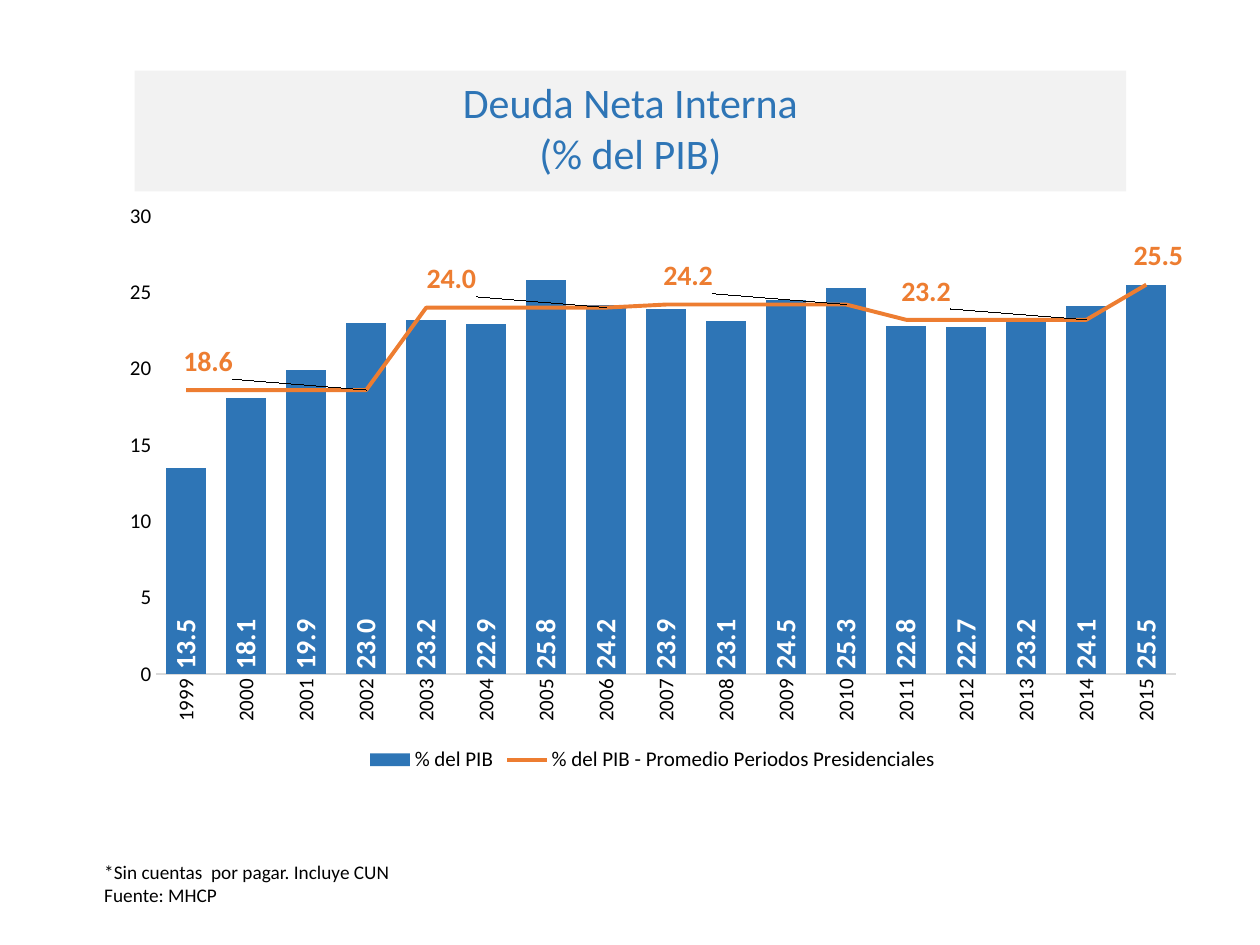
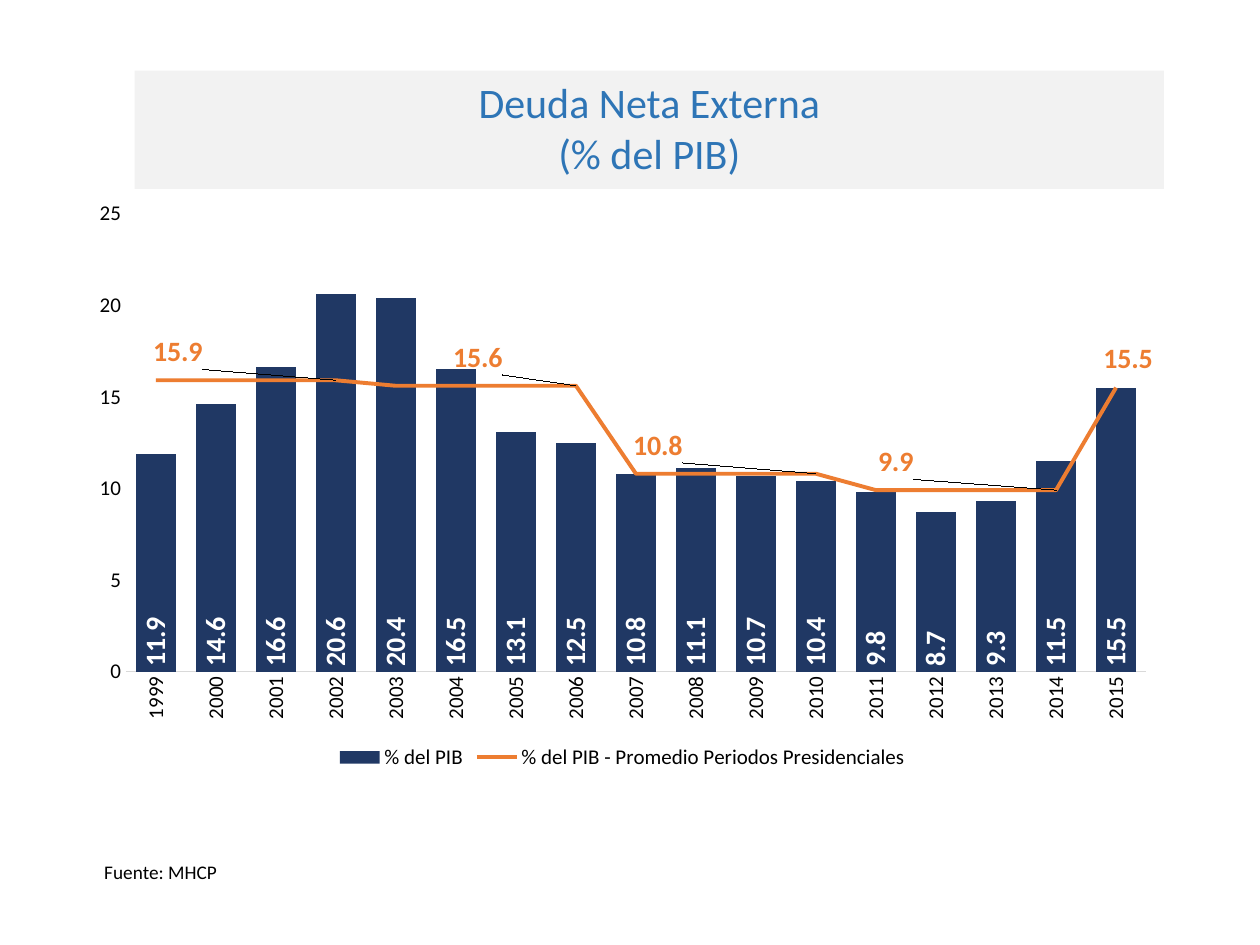
from lxml import etree
from pptx import Presentation
from pptx.chart.data import CategoryChartData as ChartData
from pptx.dml.color import RGBColor
from pptx.enum.chart import XL_CHART_TYPE as Kind
from pptx.enum.chart import XL_LABEL_POSITION as Spot
from pptx.enum.chart import XL_LEGEND_POSITION as Side
from pptx.enum.chart import XL_MARKER_STYLE as Mark
from pptx.enum.chart import XL_TICK_MARK as Tick
from pptx.enum.shapes import MSO_SHAPE as Shape
from pptx.enum.text import MSO_ANCHOR as Anchor
from pptx.enum.text import PP_ALIGN as Align
from pptx.oxml import parse_xml
from pptx.oxml.ns import qn
from pptx.util import Pt

BLUE = RGBColor(0x2E, 0x75, 0xB6)
NAVY = RGBColor(0x20, 0x38, 0x64)
ORANGE = RGBColor(0xED, 0x7D, 0x31)
PALE = RGBColor(0xF2, 0xF2, 0xF2)
GREY = RGBColor(0xD9, 0xD9, 0xD9)
WHITE = RGBColor(0xFF, 0xFF, 0xFF)
BLACK = RGBColor(0, 0, 0)
FONT = "Calibri"
YEARS = [str(year) for year in range(1999, 2016)]
TERM = 4
NS = ('xmlns:c="http://schemas.openxmlformats.org/drawingml/2006/chart" '
      'xmlns:a="http://schemas.openxmlformats.org/drawingml/2006/main"')


def style(font, size, color, bold=False):
    font.name, font.size, font.bold = FONT, Pt(size), bold
    font.color.rgb = color


def write(frame, lines, size, color, align=Align.LEFT, wrap=True):
    frame.word_wrap = wrap
    frame.vertical_anchor = Anchor.TOP
    frame.text = "\n".join(lines)
    for para in frame.paragraphs:
        para.alignment = align
        style(para.font, size, color)


def add_title(slide, box, lines):
    band = slide.shapes.add_shape(Shape.RECTANGLE, *map(Pt, box))
    band.shadow.inherit = False
    band.fill.solid()
    band.fill.fore_color.rgb = PALE
    band.line.fill.background()
    write(band.text_frame, lines, 24, BLUE, align=Align.CENTER)


def add_note(slide, box, lines):
    note = slide.shapes.add_textbox(*map(Pt, box))
    write(note.text_frame, lines, 11, BLACK, wrap=False)


def layout(x, y, **more):
    parts = {"x": x, "y": y, **more}
    body = "".join(f'<c:{key} val="{val}"/>' for key, val in parts.items())
    inner = ""
    if more:
        inner = ('<c:layoutTarget val="inner"/><c:xMode val="edge"/>'
                 '<c:yMode val="edge"/>')
    return parse_xml(f"<c:layout {NS}><c:manualLayout>{inner}{body}"
                     "</c:manualLayout></c:layout>")


def turn(node):
    for body in node.xpath("./c:txPr/a:bodyPr"):
        body.set("rot", "-5400000")
        body.set("vert", "horz")


def split_line(chart):
    bars = chart.plots[0]._element
    row = bars.findall(qn("c:ser"))[1]
    for flag in row.findall(qn("c:invertIfNegative")):
        row.remove(flag)
    plot = parse_xml(f'<c:lineChart {NS}><c:grouping val="standard"/>'
                     '<c:varyColors val="0"/></c:lineChart>')
    plot.append(row)
    etree.SubElement(plot, qn("c:marker")).set("val", "1")
    for axis in bars.findall(qn("c:axId")):
        etree.SubElement(plot, qn("c:axId")).set("val", axis.get("val"))
    bars.addnext(plot)
    return chart.plots[1].series[0]


def style_bars(plot, color):
    plot.gap_width = 50
    plot.vary_by_categories = False
    bars = plot.series[0]
    bars.invert_if_negative = False
    bars.format.fill.solid()
    bars.format.fill.fore_color.rgb = color
    tags = bars.data_labels
    tags.show_value = True
    tags.position = Spot.INSIDE_BASE
    style(tags.font, 16, WHITE, bold=True)
    turn(tags._element)


def style_line(line, shifts):
    line.smooth = False
    line.marker.style = Mark.NONE
    line.format.line.color.rgb = ORANGE
    line.format.line.width = Pt(2.25)
    line.data_labels.show_value = False
    for spot in shifts:
        tag = line.points[spot].data_label
        style(tag.font, 16, ORANGE, bold=True)
        tag.position = Spot.ABOVE
    for tag in line._element.xpath("./c:dLbls/c:dLbl"):
        mark = tag.find(qn("c:idx"))
        mark.addnext(layout(*shifts[int(mark.get("val"))]))


def style_axes(chart, top):
    cats, vals = chart.category_axis, chart.value_axis
    for axis in (cats, vals):
        axis.major_tick_mark = axis.minor_tick_mark = Tick.NONE
        axis.has_major_gridlines = False
        style(axis.tick_labels.font, 12, BLACK)
    turn(cats._element)
    cats.format.line.color.rgb = GREY
    cats.format.line.width = Pt(0.75)
    vals.format.line.fill.background()
    vals.minimum_scale, vals.maximum_scale, vals.major_unit = 0, top, 5
    vals.tick_labels.number_format = "#,##0"
    vals.tick_labels.number_format_is_linked = False


def add_debt(slide, box, debt, means, color, top, shifts):
    data = ChartData(number_format="0.0")
    data.categories = YEARS
    data.add_series("% del PIB", debt)
    data.add_series("% del PIB - Promedio Periodos Presidenciales",
                    [means[i // TERM] for i in range(len(YEARS))])
    chart = slide.shapes.add_chart(
        Kind.COLUMN_CLUSTERED, *map(Pt, box), data).chart
    style(chart.font, 12, BLACK)
    chart.has_title = False
    chart.has_legend = True
    chart.legend.position = Side.BOTTOM
    chart.legend.include_in_layout = False
    style(chart.legend.font, 12, BLACK)
    line = split_line(chart)
    style_bars(chart.plots[0], color)
    style_line(line, shifts)
    style_axes(chart, top)
    area = chart._chartSpace.find(qn("c:chart"))
    area.addnext(parse_xml(
        f'<c:spPr {NS}><a:solidFill><a:srgbClr val="{WHITE}"/></a:solidFill>'
        "<a:ln><a:noFill/></a:ln></c:spPr>"))
    plot = area.find(qn("c:plotArea"))
    for old in plot.findall(qn("c:layout")):
        plot.remove(old)
    plot.insert(0, layout(0.045, 0.042, w=0.935, h=0.782))


def add_page(deck, name, width, spot, notes, **facts):
    slide = deck.slides.add_slide(deck.slide_layouts[6])
    add_note(slide, (52.5, 488, 180, 4 + 15 * len(notes)), notes)
    add_title(slide, (77, 40.3, width, 94.3), [name, "(% del PIB)"])
    add_debt(slide, (*spot, 623.5, 334.8), **facts)


def main():
    deck = Presentation()
    deck.slide_width, deck.slide_height = Pt(720), Pt(540)
    source = "Fuente: MHCP"
    shifts = {3: (-0.145, -0.01), 7: (-0.142, -0.01), 11: (-0.145, -0.01),
              15: (-0.147, -0.01), 16: (0.011, -0.01)}
    add_page(
        deck, "Deuda Neta Interna", 566.6, (61.2, 109.4),
        ["*Sin cuentas  por pagar. Incluye CUN", source],
        debt=[13.5, 18.1, 19.9, 23.0, 23.2, 22.9, 25.8, 24.2, 23.9,
              23.1, 24.5, 25.3, 22.8, 22.7, 23.2, 24.1, 25.5],
        means=[18.6, 24.0, 24.2, 23.2, 25.5],
        color=BLUE, top=30, shifts=shifts)
    add_page(
        deck, "Deuda Neta Externa", 588.2, (43.9, 108), [source],
        debt=[11.9, 14.6, 16.6, 20.6, 20.4, 16.5, 13.1, 12.5, 10.8,
              11.1, 10.7, 10.4, 9.8, 8.7, 9.3, 11.5, 15.5],
        means=[15.9, 15.6, 10.8, 9.9, 15.5],
        color=NAVY, top=25, shifts={**shifts, 7: (-0.09, -0.01)})
    deck.save("out.pptx")


if __name__ == "__main__":
    main()
